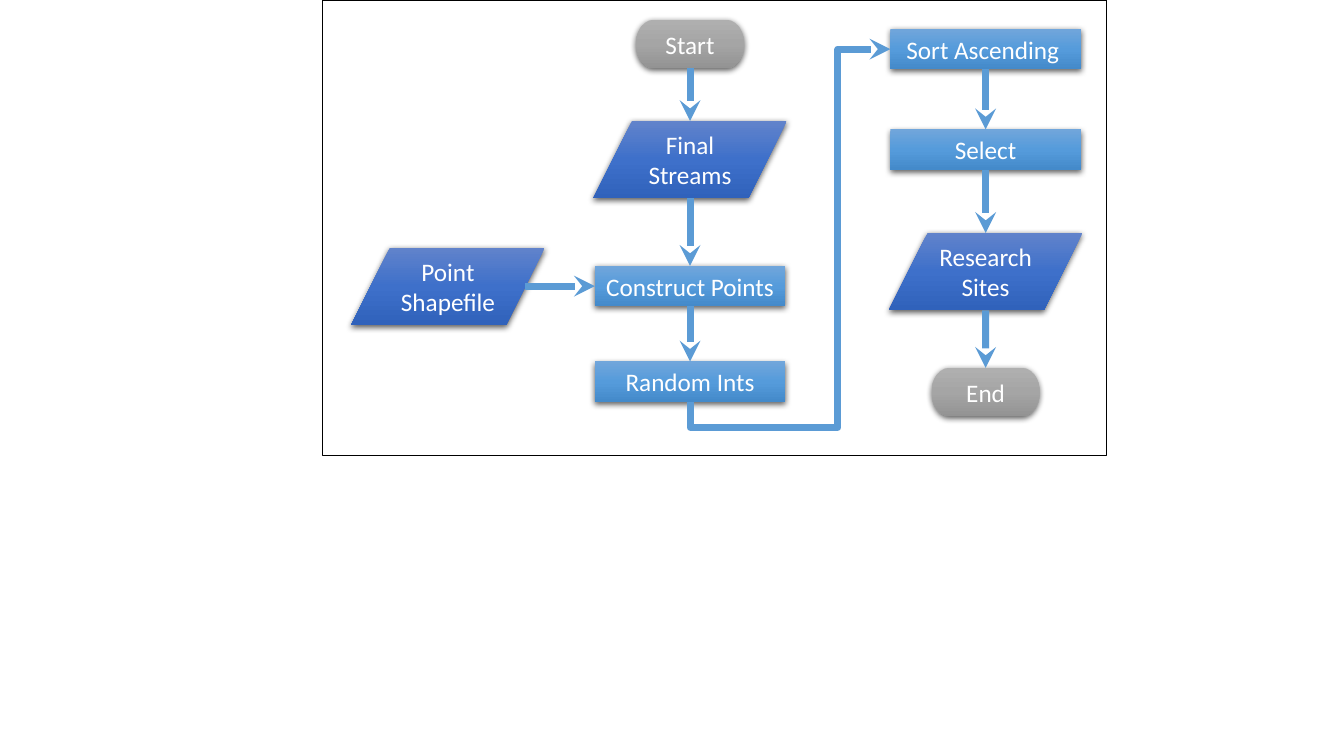
from copy import deepcopy

from pptx import Presentation
from pptx.dml.color import RGBColor
from pptx.enum import shapes, text
from pptx.oxml import parse_xml
from pptx.oxml.ns import nsdecls, qn
from pptx.util import Cm, Pt

WHITE = RGBColor(0xFF, 0xFF, 0xFF)
BLACK = RGBColor(0x00, 0x00, 0x00)
ARROW_BLUE = RGBColor(0x5B, 0x9B, 0xD5)
GREYS = [RGBColor(0xAF, 0xAF, 0xAF), RGBColor(0xA5, 0xA5, 0xA5), RGBColor(0x93, 0x93, 0x93)]
LIGHT_BLUES = [RGBColor(0x71, 0xA6, 0xDB), RGBColor(0x55, 0x9B, 0xDB), RGBColor(0x44, 0x8A, 0xCA)]
DARK_BLUES = [RGBColor(0x61, 0x83, 0xCB), RGBColor(0x3E, 0x70, 0xCA), RGBColor(0x30, 0x62, 0xBB)]

KIND = shapes.MSO_SHAPE
TERMINATOR, PROCESS, DATA = (
    KIND.FLOWCHART_TERMINATOR, KIND.FLOWCHART_PROCESS, KIND.FLOWCHART_DATA)
# kind: width, height, gradient colours
STYLES = {
    TERMINATOR: (2.72, 1.22, GREYS),
    PROCESS: (4.8, 1.02, LIGHT_BLUES),
    DATA: (4.88, 1.95, DARK_BLUES),
}
TOP, LEFT, BOTTOM = 0, 1, 2
LEFT_COLUMN, RIGHT_COLUMN, INPUT_COLUMN = 17.39, 24.84, 11.29

# label, kind, centre, top
STEPS = [
    ("Start", TERMINATOR, LEFT_COLUMN, 0.5),
    ("Final Streams", DATA, LEFT_COLUMN, 3.05),
    ("Point Shapefile", DATA, INPUT_COLUMN, 6.24),
    ("Construct Points", PROCESS, LEFT_COLUMN, 6.7),
    ("Random Ints", PROCESS, LEFT_COLUMN, 9.11),
    ("Sort Ascending ", PROCESS, RIGHT_COLUMN, 0.73),
    ("Select", PROCESS, RIGHT_COLUMN, 3.26),
    ("Research Sites", DATA, RIGHT_COLUMN, 5.87),
    ("End", TERMINATOR, RIGHT_COLUMN, 9.27),
]
DOWNWARD_FLOWS = [
    ("Start", "Final Streams"),
    ("Final Streams", "Construct Points"),
    ("Construct Points", "Random Ints"),
    ("Sort Ascending ", "Select"),
    ("Select", "Research Sites"),
    ("Research Sites", "End"),
]

deck = Presentation()
deck.slide_width, deck.slide_height = Cm(33.87), Cm(19.05)
slide = deck.slides.add_slide(deck.slide_layouts[6])


def add_step(label, kind, centre, top):
    width, height, colours = STYLES[kind]
    step = slide.shapes.add_shape(
        kind, Cm(centre - width / 2), Cm(top), Cm(width), Cm(height))
    step.line.fill.background()
    step.fill.gradient()
    step.fill.gradient_angle = 270
    properties = step._element.spPr
    stops = properties.find(".//" + qn("a:gsLst"))
    stops.insert(1, deepcopy(stops[0]))
    for stop, position, colour in zip(step.fill.gradient_stops, (0, 0.5, 1), colours):
        stop.position = position
        stop.color.rgb = colour

    step.shadow.inherit = False
    properties.find(qn("a:effectLst")).append(parse_xml(
        f'<a:outerShdw {nsdecls("a")} blurRad="57150" dist="19050" dir="5400000" '
        'algn="ctr" rotWithShape="0"><a:srgbClr val="000000">'
        '<a:alpha val="63000"/></a:srgbClr></a:outerShdw>'))

    frame = step.text_frame
    frame.word_wrap = True
    frame.vertical_anchor = text.MSO_ANCHOR.MIDDLE
    if kind != DATA:
        for side in ("left", "top", "right", "bottom"):
            setattr(frame, f"margin_{side}", 0)
    paragraph = frame.paragraphs[0]
    paragraph.alignment = text.PP_ALIGN.CENTER
    run = paragraph.add_run()
    run.text = label
    for name, value in {"name": "Calibri", "size": Pt(18)}.items():
        setattr(run.font, name, value)
    run.font.color.rgb = WHITE
    return step


def add_arrow(route, *ends):
    arrow = slide.shapes.add_connector(route, *ends)
    arrow.line.color.rgb = ARROW_BLUE
    arrow.line.width = Pt(5)
    arrow.line._get_or_add_ln().append(
        parse_xml(f'<a:tailEnd {nsdecls("a")} type="stealth"/>'))
    arrow._element.spPr.append(parse_xml(f'<a:effectLst {nsdecls("a")}/>'))
    return arrow


steps = {label: add_step(label, kind, centre, top) for label, kind, centre, top in STEPS}
kinds = {label: kind for label, kind, _, _ in STEPS}

for source, target in DOWNWARD_FLOWS:
    upper, lower = steps[source], steps[target]
    middle = upper.left + upper.width // 2
    arrow = add_arrow(shapes.MSO_CONNECTOR.STRAIGHT,
                      middle, upper.top + upper.height, middle, lower.top)
    # Sites 0 to 3 of a slanted data shape are not its side middles
    if kinds[source] != DATA:
        arrow.begin_connect(upper, BOTTOM)
    if kinds[target] != DATA:
        arrow.end_connect(lower, TOP)

point_file, construct = steps["Point Shapefile"], steps["Construct Points"]
level = construct.top + construct.height // 2
slanted_edge = point_file.left + int(point_file.width * 0.9)
input_arrow = add_arrow(shapes.MSO_CONNECTOR.STRAIGHT,
                        slanted_edge, level, construct.left, level)
input_arrow.end_connect(construct, LEFT)

# The link between columns leaves downward, so its box is turned a quarter
random_ints, sort = steps["Random Ints"], steps["Sort Ascending "]
column_link = add_arrow(shapes.MSO_CONNECTOR.ELBOW, 0, 0, 0, 0)
column_link.begin_connect(random_ints, BOTTOM)
column_link.end_connect(sort, LEFT)
start_x, start_y = column_link.begin_x, column_link.begin_y
end_x, end_y = column_link.end_x, column_link.end_y
rise, run_across = start_y - end_y, end_x - start_x
link_box = {
    "left": (start_x + end_x - rise) // 2,
    "top": (start_y + end_y - run_across) // 2,
    "width": rise,
    "height": run_across,
}
for name, value in link_box.items():
    setattr(column_link, name, value)
link_properties = column_link._element.spPr
for name, value in {"rot": "5400000", "flipH": "1", "flipV": "1"}.items():
    link_properties.find(qn("a:xfrm")).set(name, value)
geometry = link_properties.find(qn("a:prstGeom"))
geometry.set("prst", "bentConnector4")
bends = geometry.find(qn("a:avLst"))
for name, value in {"adj1": -7200, "adj2": 73800}.items():
    bends.append(parse_xml(f'<a:gd {nsdecls("a")} name="{name}" fmla="val {value}"/>'))

border = slide.shapes.add_shape(KIND.RECTANGLE, Cm(8.13), Cm(0), Cm(19.76), Cm(11.48))
border.shadow.inherit = False
border.fill.background()
border.line.color.rgb = BLACK
border.line.width = Pt(1)

deck.save("out.pptx")
